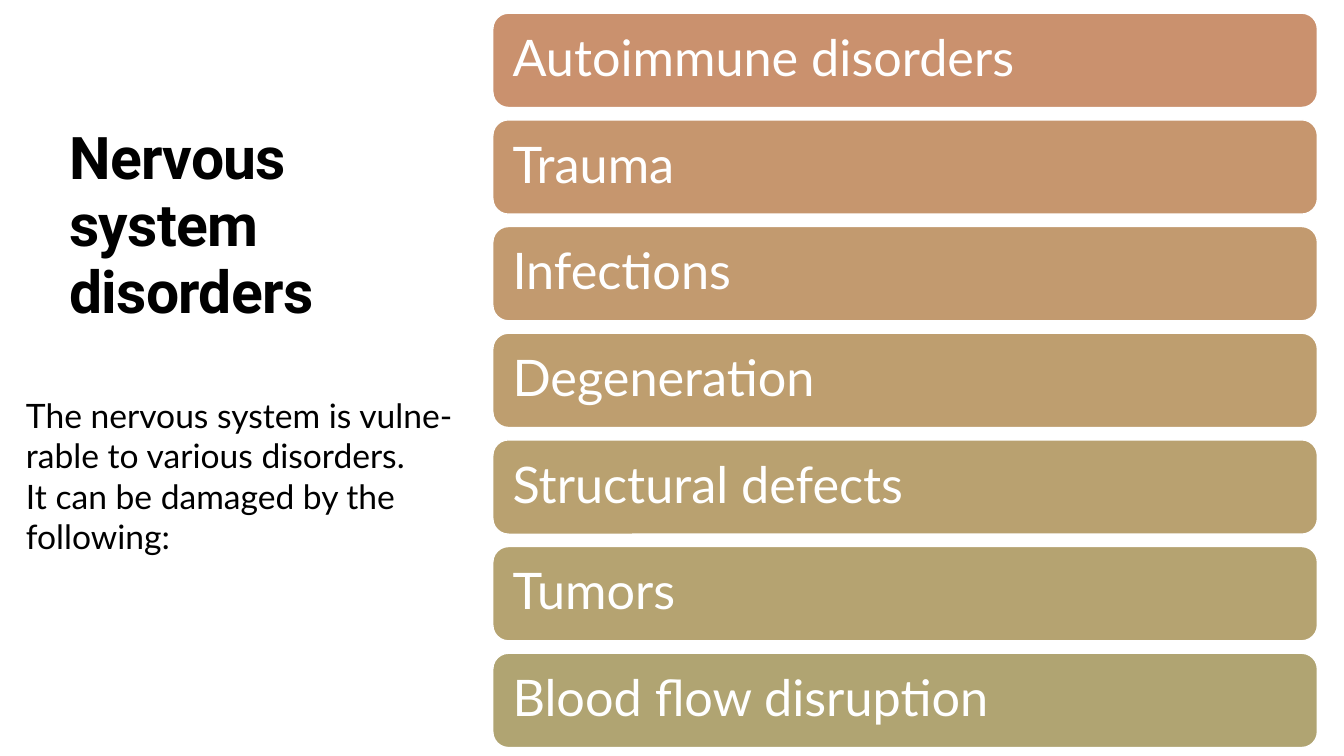
"""Build the slide on nervous system disorders and their causes."""
from pptx import Presentation
from pptx.dml.color import RGBColor
from pptx.enum.shapes import MSO_SHAPE
from pptx.enum.text import MSO_ANCHOR, PP_ALIGN
from pptx.util import Pt

THEME = {
    "heading_font": "Roboto", "body_font": "Lato",
    "heading_size": 42, "cause_size": 36, "intro_size": 24,
    "ink": "000000", "paper": "FFFFFF",
}
HEADING = "Nervous system disorders"
INTRO = [
    "The nervous system is vulne-rable to various disorders. ",
    "It can be damaged by the following:",
]
CAUSES = [
    ("Autoimmune disorders", "CA916E"),
    ("Trauma", "C6966E"),
    ("Infections", "C29A6F"),
    ("Degeneration", "BE9E6F"),
    ("Structural defects", "B9A170"),
    ("Tumors", "B5A371"),
    ("Blood flow disruption", "B0A472"),
]
HEADING_BOX = (42.5, -46, 260, 415.4)
INTRO_BOX = (11.5, 278.6, 324, 123.8)
CAUSE_LEFT, CAUSE_TOP, CAUSE_WIDTH, CAUSE_HEIGHT = 352, 9.4, 589, 67.4
CAUSE_PITCH = 76.2
CAUSE_INSET = 10.8


def colour(code):
    return RGBColor.from_string(code)


def write(paragraph, wording, face, size, ink, bold=False):
    run = paragraph.add_run()
    run.text = wording
    run.font.name = face
    run.font.size = Pt(size)
    run.font.bold = bold
    run.font.color.rgb = colour(ink)
    return run


def add_text_frame(slide, box):
    frame = slide.shapes.add_textbox(*map(Pt, box)).text_frame
    frame.word_wrap = True
    return frame


def add_heading(slide):
    frame = add_text_frame(slide, HEADING_BOX)
    frame.vertical_anchor = MSO_ANCHOR.MIDDLE
    paragraph = frame.paragraphs[0]
    paragraph.line_spacing = 0.95
    heading = write(paragraph, HEADING, THEME["heading_font"],
                    THEME["heading_size"], THEME["ink"], bold=True)
    heading.font._element.set("spc", "-50")


def add_intro(slide):
    paragraph = add_text_frame(slide, INTRO_BOX).paragraphs[0]
    for index, sentence in enumerate(INTRO):
        if index:
            paragraph.add_line_break()
        write(paragraph, sentence, THEME["body_font"],
              THEME["intro_size"], THEME["ink"])


def add_cause(slide, index, wording, fill):
    top = CAUSE_TOP + index * CAUSE_PITCH
    bar = slide.shapes.add_shape(
        MSO_SHAPE.ROUNDED_RECTANGLE,
        *map(Pt, (CAUSE_LEFT, top, CAUSE_WIDTH, CAUSE_HEIGHT)))
    bar.shadow.inherit = False
    bar.fill.solid()
    bar.fill.fore_color.rgb = colour(fill)
    bar.line.color.rgb = colour(THEME["paper"])
    bar.line.width = Pt(1)
    frame = bar.text_frame
    frame.word_wrap = True
    frame.vertical_anchor = MSO_ANCHOR.MIDDLE
    frame.margin_left = frame.margin_right = Pt(CAUSE_INSET)
    frame.margin_top = frame.margin_bottom = Pt(CAUSE_INSET)
    paragraph = frame.paragraphs[0]
    paragraph.alignment = PP_ALIGN.LEFT
    paragraph.line_spacing = 0.9
    write(paragraph, wording, THEME["body_font"],
          THEME["cause_size"], THEME["paper"])


def main():
    deck = Presentation()
    deck.slide_width, deck.slide_height = Pt(960), Pt(540)
    slide = deck.slides.add_slide(deck.slide_layouts[6])
    add_heading(slide)
    for index, (wording, fill) in enumerate(CAUSES):
        add_cause(slide, index, wording, fill)
    add_intro(slide)
    deck.save("out.pptx")


if __name__ == "__main__":
    main()
